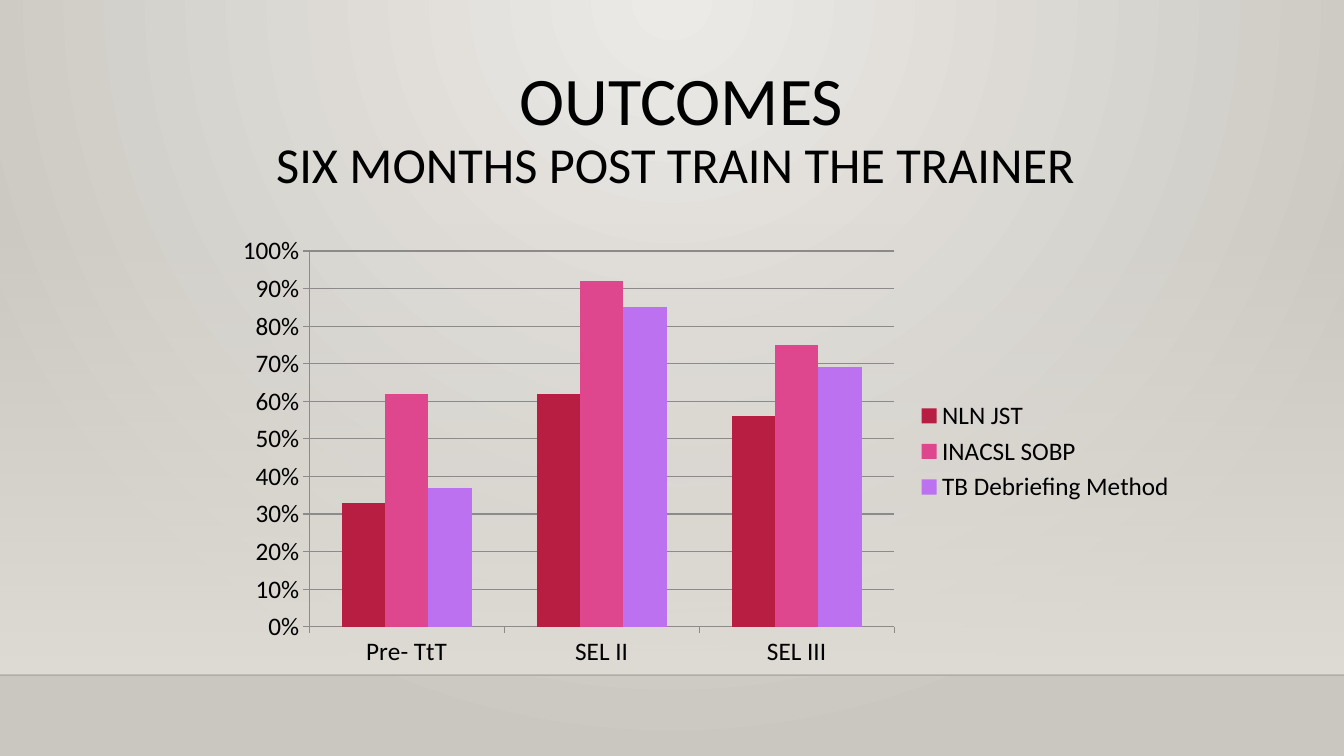
import dataclasses

import pptx
import pptx.chart.data
import pptx.dml.color
import pptx.enum.chart
import pptx.enum.shapes
import pptx.enum.text
import pptx.oxml
import pptx.oxml.ns
import pptx.util

PX = 9525
WIDTH, HEIGHT = 1280, 720
FLOOR_Y = 643


def rgb(code):
    return pptx.dml.color.RGBColor.from_string(code)


def element(tag, **attributes):
    node = pptx.oxml.parse_xml(f'<{tag} {pptx.oxml.ns.nsdecls("a")}/>')
    for key, value in attributes.items():
        node.set(key, str(value))
    return node


def apply(target, values):
    for key, value in values.items():
        setattr(target, key, value)


@dataclasses.dataclass(frozen=True)
class Theme:
    font: str = "Calibri"
    ink: str = "000000"
    glow: str = "ECEAE7"
    edge: str = "CAC7C1"
    wall: str = "DFDBD5"
    horizon: str = "000001"
    grid: str = "8B8B8B"
    bars: tuple = ("B71E42", "DE478E", "BC72F0")
    title_size: float = 48.6
    subtitle_size: float = 36
    chart_size: float = 18


class SlideBuilder:
    def __init__(self, slide, theme):
        self.slide = slide
        self.theme = theme

    def box(self, *lengths):
        return [length * PX for length in lengths]

    def style_font(self, font, size):
        apply(font, {"name": self.theme.font, "size": pptx.util.Pt(size)})
        font.color.rgb = rgb(self.theme.ink)

    def gradient(self, owner, fill, colors, direction):
        """Fill with two colours, directed by a lin or path element."""
        fill.gradient()
        for stop, color, position in zip(fill.gradient_stops, colors, (0, 1)):
            stop.color.rgb = rgb(color)
            stop.position = position
        linear = next(owner.iter(pptx.oxml.ns.qn("a:lin")))
        linear.getparent().replace(linear, direction)

    def set_opacity(self, owner, percent):
        """Set the opacity of the first colour found in owner."""
        color = next(owner.iter(pptx.oxml.ns.qn("a:srgbClr")))
        color.append(element("a:alpha", val=percent * 1000))

    def background(self):
        circle = element("a:path", path="circle")
        circle.append(element("a:fillToRect", l=43000, t=0, r=43000, b=100000))
        self.gradient(self.slide.element, self.slide.background.fill,
                      (self.theme.glow, self.theme.edge), circle)

    def wall(self, *lengths):
        """Add a rectangle that fades in from top to bottom."""
        wall = self.slide.shapes.add_shape(
            pptx.enum.shapes.MSO_SHAPE.RECTANGLE, *self.box(*lengths))
        wall.shadow.inherit = False
        wall.line.fill.background()
        self.gradient(wall.element, wall.fill, (self.theme.wall,) * 2,
                      element("a:lin", ang=5400000, scaled=0))
        self.set_opacity(wall.element, 0)

    def horizon(self, y):
        horizon = self.slide.shapes.add_connector(
            pptx.enum.shapes.MSO_CONNECTOR.STRAIGHT, *self.box(0, y, WIDTH, y))
        horizon.line.color.rgb = rgb(self.theme.horizon)
        horizon.line.width = pptx.util.Pt(1)
        self.set_opacity(horizon.element, 20)
        horizon.element.spPr.append(element("a:effectLst"))

    def heading(self, lines, *lengths):
        """Add centred (text, size) lines as one paragraph."""
        frame = self.slide.shapes.add_textbox(*self.box(*lengths)).text_frame
        apply(frame, {"word_wrap": True,
                      "vertical_anchor": pptx.enum.text.MSO_ANCHOR.TOP})
        paragraph = frame.paragraphs[0]
        apply(paragraph, {"alignment": pptx.enum.text.PP_ALIGN.CENTER,
                          "line_spacing": 0.9})
        for index, (text, size) in enumerate(lines):
            if index:
                paragraph.add_line_break()
            run = paragraph.add_run()
            run.text = text
            self.style_font(run.font, size)

    def column_chart(self, categories, outcomes, *lengths):
        data = pptx.chart.data.CategoryChartData(number_format="0%")
        data.categories = categories
        for method, shares in outcomes.items():
            data.add_series(method, shares)
        chart = self.slide.shapes.add_chart(
            pptx.enum.chart.XL_CHART_TYPE.COLUMN_CLUSTERED,
            *self.box(*lengths), data).chart
        apply(chart, {"has_title": False, "has_legend": True})
        apply(chart.legend, {
            "position": pptx.enum.chart.XL_LEGEND_POSITION.RIGHT,
            "include_in_layout": False})
        self.style_font(chart.font, self.theme.chart_size)

        plot = chart.plots[0]
        apply(plot, {"gap_width": 150, "vary_by_categories": False})
        for series, color in zip(plot.series, self.theme.bars):
            series.format.fill.solid()
            series.format.fill.fore_color.rgb = rgb(color)

        shares_axis = chart.value_axis
        apply(shares_axis, {"minimum_scale": 0, "maximum_scale": 1,
                            "major_unit": 0.1, "has_major_gridlines": True})
        apply(shares_axis.tick_labels, {"number_format": "0%",
                                        "number_format_is_linked": False})
        for axis in (chart.category_axis, shares_axis):
            axis.major_tick_mark = pptx.enum.chart.XL_TICK_MARK.OUTSIDE
        for ruled in (chart.category_axis, shares_axis,
                      shares_axis.major_gridlines):
            ruled.format.line.color.rgb = rgb(self.theme.grid)
            ruled.format.line.width = pptx.util.Pt(0.75)


def main():
    deck = pptx.Presentation()
    apply(deck, {"slide_width": WIDTH * PX, "slide_height": HEIGHT * PX})
    theme = Theme()
    builder = SlideBuilder(deck.slides.add_slide(deck.slide_layouts[6]), theme)
    builder.background()
    builder.wall(0, 212, WIDTH, FLOOR_Y - 212)
    builder.horizon(FLOOR_Y)
    builder.heading([("OUTCOMES", theme.title_size),
                     ("SIX MONTHS POST TRAIN THE TRAINER ", theme.subtitle_size)],
                    169, 59, 960, 120)
    builder.column_chart(
        ["Pre- TtT", "SEL II", "SEL III"],
        {"NLN JST": (0.33, 0.62, 0.56),
         "INACSL SOBP": (0.62, 0.92, 0.75),
         "TB Debriefing Method": (0.37, 0.85, 0.69)},
        213, 216, 916, 428)
    deck.save("out.pptx")


if __name__ == "__main__":
    main()
